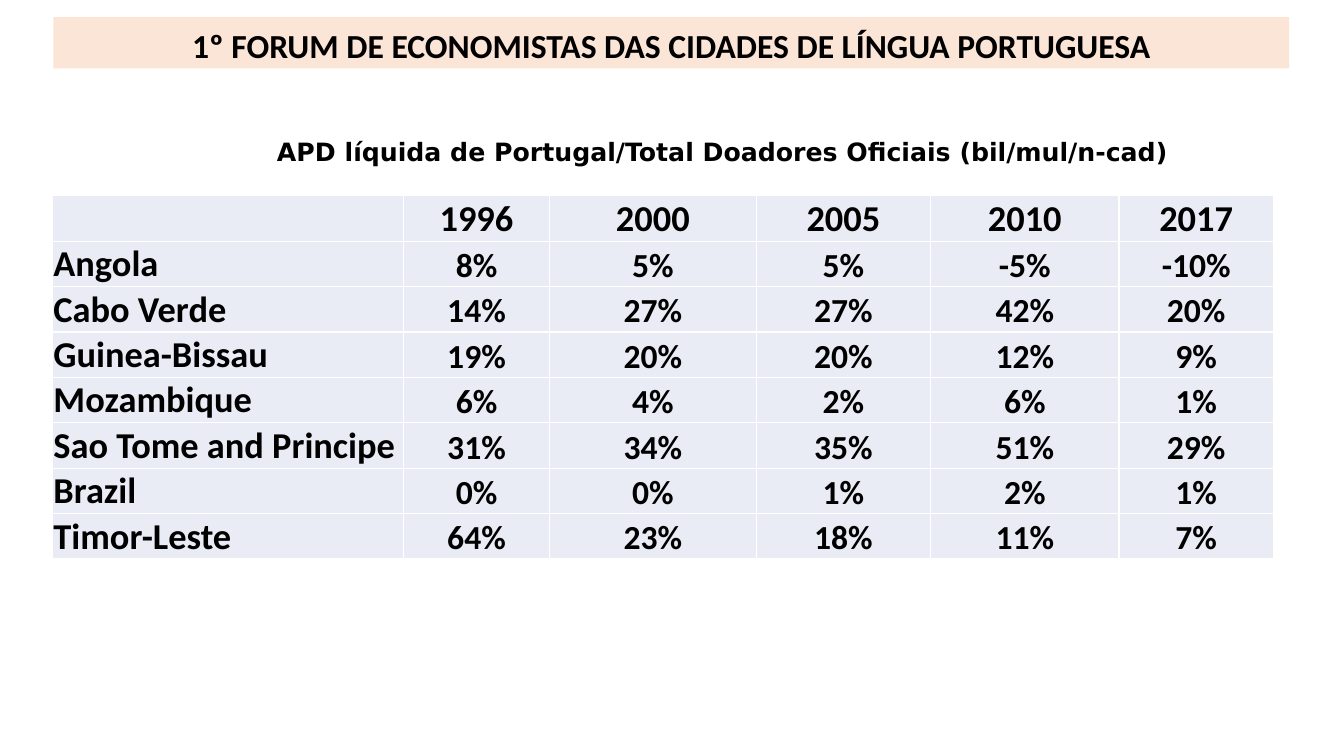
import pptx
import pptx.util
import pptx.dml.color
import pptx.enum.shapes
import pptx.enum.text
from lxml import etree

Pt = pptx.util.Pt
ALIGN = pptx.enum.text.PP_ALIGN
ANCHOR = pptx.enum.text.MSO_ANCHOR
COLORS = {"text": "000000", "banner": "FBE5D6", "cell": "E9EBF5", "border": "FFFFFF"}
YEARS = ["1996", "2000", "2005", "2010", "2017"]
SHARES = {
    "Angola": ["8%", "5%", "5%", "-5%", "-10%"],
    "Cabo Verde": ["14%", "27%", "27%", "42%", "20%"],
    "Guinea-Bissau": ["19%", "20%", "20%", "12%", "9%"],
    "Mozambique": ["6%", "4%", "2%", "6%", "1%"],
    "Sao Tome and Principe": ["31%", "34%", "35%", "51%", "29%"],
    "Brazil": ["0%", "0%", "1%", "2%", "1%"],
    "Timor-Leste": ["64%", "23%", "18%", "11%", "7%"],
}
COL_WIDTHS = [250.6, 104.4, 147.6, 124.6, 134.6, 110.2]
ROW_HEIGHT = 31.6


def rgb(name):
    return pptx.dml.color.RGBColor.from_string(COLORS[name])


def write(tf, text, size, font="Calibri", align=ALIGN.CENTER):
    """Put one bold paragraph in a text frame and return it."""
    tf.text = text
    p = tf.paragraphs[0]
    p.alignment = align
    for r in p.runs:
        r.font.name = font
        r.font.size = Pt(size)
        r.font.bold = True
        r.font.color.rgb = rgb("text")
    return p


prs = pptx.Presentation()
prs.slide_width, prs.slide_height = Pt(960), Pt(540)
s = prs.slides.add_slide(prs.slide_layouts[6])

# Table of shares by country and year
rows = [["", *YEARS]] + [[country, *values] for country, values in SHARES.items()]
frame = s.shapes.add_table(len(rows), len(COL_WIDTHS), Pt(37.6), Pt(139.8),
                           Pt(sum(COL_WIDTHS)), Pt(ROW_HEIGHT * len(rows)))
table = frame.table
for col, width in zip(table.columns, COL_WIDTHS):
    col.width = Pt(width)
for i, values in enumerate(rows):
    table.rows[i].height = Pt(ROW_HEIGHT)
    for j, value in enumerate(values):
        cell = table.cell(i, j)
        cell.margin_left = cell.margin_right = cell.margin_top = Pt(0.6)
        cell.margin_bottom = 0
        cell.vertical_anchor = ANCHOR.BOTTOM if j else ANCHOR.TOP
        write(cell.text_frame, value, 24 if i and j else 26,
              align=ALIGN.CENTER if j else ALIGN.LEFT)
        tcPr = cell._tc.get_or_add_tcPr()
        for side in ("lnL", "lnR", "lnT", "lnB"):
            tcPr.append(pptx.oxml.parse_xml(
                f'<a:{side} xmlns:a="http://schemas.openxmlformats.org/drawingml/2006/main" w="12700">'
                f'<a:solidFill><a:srgbClr val="{COLORS["border"]}"/></a:solidFill></a:{side}>'))
        cell.fill.solid()
        cell.fill.fore_color.rgb = rgb("cell")

# Table heading
heading = s.shapes.add_textbox(Pt(190.8), Pt(93.6), Pt(681.8), Pt(28.8))
heading.text_frame.word_wrap = False
write(heading.text_frame, "APD líquida de Portugal/Total Doadores Oficiais (bil/mul/n-cad)",
      18, "DejaVu Sans", ALIGN.LEFT)

# Forum banner
banner = s.shapes.add_shape(pptx.enum.shapes.MSO_SHAPE.RECTANGLE,
                            Pt(38.2), Pt(12.2), Pt(882.7), Pt(36.7))
banner.shadow.inherit = False
banner.fill.solid()
banner.fill.fore_color.rgb = rgb("banner")
banner.line.fill.background()
tf = banner.text_frame
tf.word_wrap = True
tf.vertical_anchor = ANCHOR.TOP
p = write(tf, "1º FORUM DE ECONOMISTAS DAS CIDADES DE LÍNGUA PORTUGUESA", 24)
p.line_spacing = 1.07
p.space_after = Pt(8)

prs.save("out.pptx")
